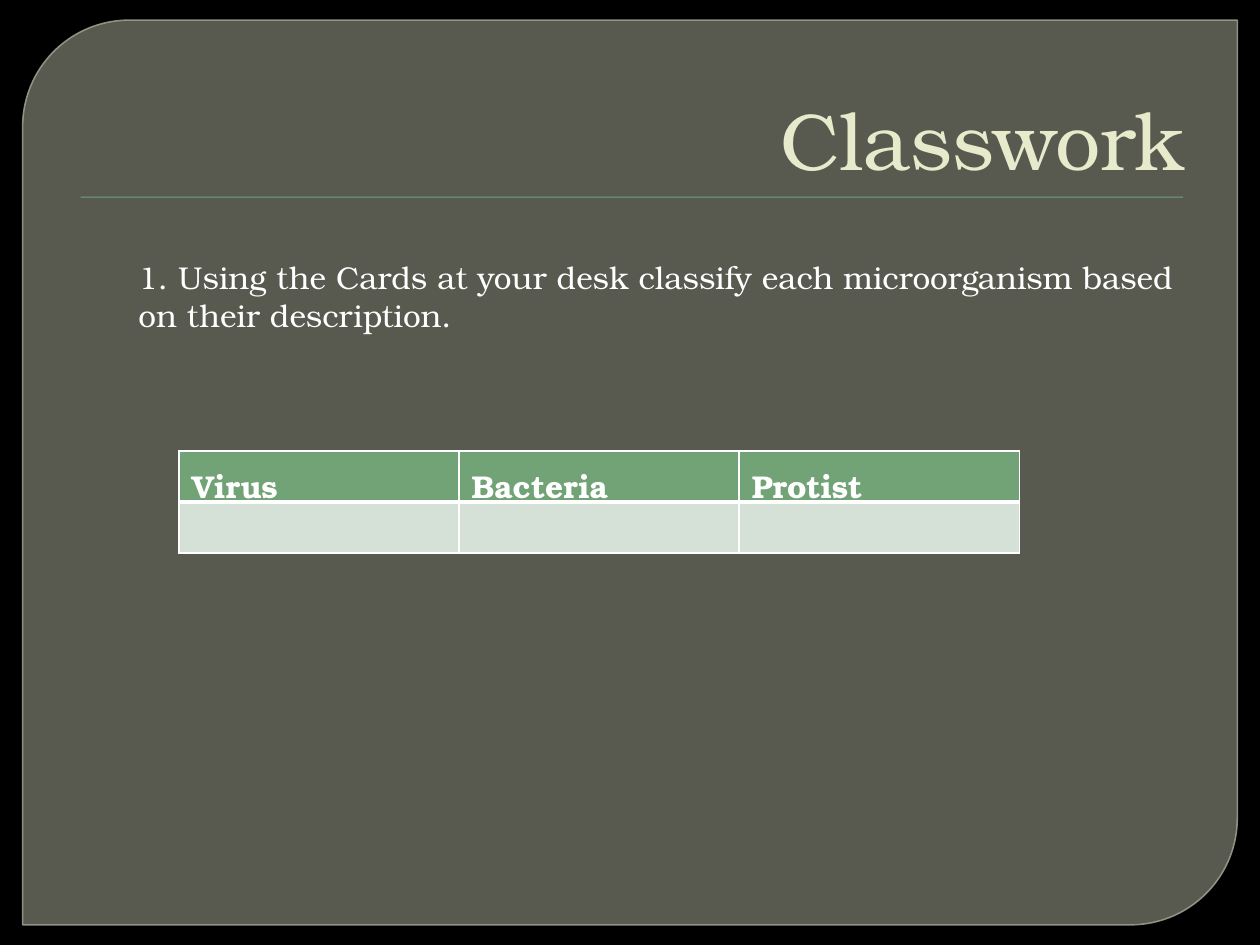
"""Build the Classwork slide with a microorganism classification table."""
from dataclasses import dataclass

import lxml.etree
import pptx
import pptx.dml.color
import pptx.enum.shapes
import pptx.enum.text
import pptx.oxml.ns
import pptx.util
from pptx.util import Inches


@dataclass(frozen=True)
class Theme:
    font: str = "TeX Gyre Bonum"
    background: str = "000000"
    panel: str = "888B7B"
    panel_line: str = "9DA090"
    green: str = "72A376"
    pale_green: str = "D5E0D6"
    title: str = "E7EACB"
    white: str = "FFFFFF"
    title_size: int = 46
    body_size: int = 18


theme = Theme()
color = pptx.dml.color.RGBColor.from_string
qn = pptx.oxml.ns.qn
shapes = pptx.enum.shapes.MSO_SHAPE


def write(frame, text, size, ink, bold=False):
    frame.text = text
    frame.word_wrap = True
    para = frame.paragraphs[0]
    for span in para.runs:
        span.font.name = theme.font
        span.font.size = pptx.util.Pt(size)
        span.font.bold = bold
        span.font.color.rgb = color(ink)
    return para


def set_alpha(fill_owner, percent):
    solid = fill_owner.find(qn("a:solidFill"))
    lxml.etree.SubElement(solid[0], qn("a:alpha"), val=str(percent * 1000))


deck = pptx.Presentation()
deck.slide_width = Inches(10)
deck.slide_height = Inches(7.5)
page = deck.slides.add_slide(deck.slide_layouts[6])
page.background.fill.solid()
page.background.fill.fore_color.rgb = color(theme.background)

panel = page.shapes.add_shape(
    shapes.ROUND_2_DIAG_RECTANGLE, Inches(0.18), Inches(0.16), Inches(9.64), Inches(7.18)
)
panel.adjustments[0] = 0.118
panel.adjustments[1] = 0
panel.shadow.inherit = False
panel.fill.solid()
panel.fill.fore_color.rgb = color(theme.panel)
panel.line.color.rgb = color(theme.panel_line)
panel.line.width = pptx.util.Pt(0.87)
properties = panel.element.spPr
set_alpha(properties, 65)
set_alpha(properties.find(qn("a:ln")), 88)

rule = page.shapes.add_shape(
    shapes.RECTANGLE, Inches(0.64), Inches(1.56), Inches(8.75), Inches(0.01)
)
rule.shadow.inherit = False
rule.fill.solid()
rule.fill.fore_color.rgb = color(theme.green)
rule.line.fill.background()

title = page.shapes.add_textbox(Inches(0.5), Inches(0.28), Inches(9), Inches(1.25))
title.text_frame.vertical_anchor = pptx.enum.text.MSO_ANCHOR.BOTTOM
para = write(title.text_frame, "Classwork", theme.title_size, theme.title)
para.alignment = pptx.enum.text.PP_ALIGN.RIGHT

task = page.shapes.add_textbox(Inches(1), Inches(2), Inches(8.42), Inches(0.71))
write(
    task.text_frame,
    "1. Using the Cards at your desk classify each microorganism based on their description.",
    theme.body_size,
    theme.white,
)

groups = ["Virus", "Bacteria", "Protist"]
table = page.shapes.add_table(
    2, len(groups), Inches(1.42), Inches(3.58), Inches(6.67), Inches(0.81)
).table
fills = [theme.green, theme.pale_green]
borders = [
    {"lnL": 1, "lnR": 1, "lnT": 1, "lnB": 3},
    {"lnL": 1, "lnR": 1, "lnB": 1},
]
for row in range(2):
    for column, group in enumerate(groups):
        cell = table.cell(row, column)
        cell.fill.solid()
        cell.fill.fore_color.rgb = color(fills[row])
        if row == 0:
            cell.margin_top = Inches(0.09)
            cell.margin_bottom = Inches(0.01)
            write(cell.text_frame, group, theme.body_size, theme.white, bold=True)
        cell_properties = cell._tc.get_or_add_tcPr()
        for position, (side, width) in enumerate(borders[row].items()):
            edge = lxml.etree.Element(qn(f"a:{side}"), w=str(pptx.util.Pt(width)))
            solid = lxml.etree.SubElement(edge, qn("a:solidFill"))
            lxml.etree.SubElement(solid, qn("a:srgbClr"), val=theme.white)
            cell_properties.insert(position, edge)

deck.save("out.pptx")
